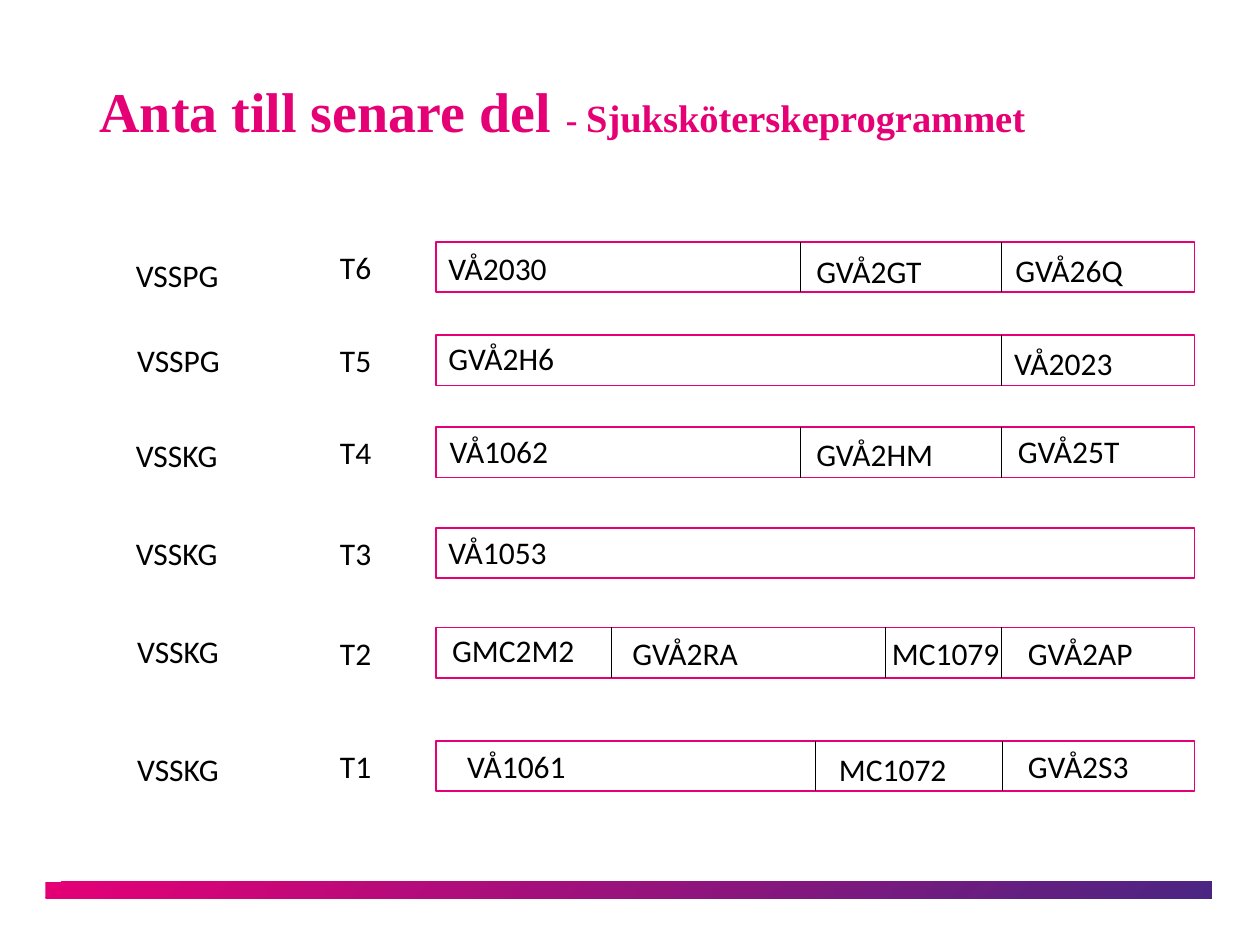
from lxml import etree
from pptx import Presentation
from pptx.dml.color import RGBColor
from pptx.enum.shapes import MSO_CONNECTOR, MSO_SHAPE
from pptx.enum.text import MSO_ANCHOR, MSO_AUTO_SIZE, PP_ALIGN
from pptx.oxml.ns import qn
from pptx.util import Inches, Pt

RECT = MSO_SHAPE.RECTANGLE
STRAIGHT = MSO_CONNECTOR.STRAIGHT
MIDDLE = MSO_ANCHOR.MIDDLE
LEFT = PP_ALIGN.LEFT
NO_FIT = MSO_AUTO_SIZE.NONE
TITLE_ONLY = 5

COLORS = {"pink": "E50076", "purple": "4B2582", "black": "000000", "white": "FFFFFF"}
ROW_H = 0.4
BAR_X, BAR_W = 3.46, 6.02
TERM_X = 2.6

# Term, top, (programme, x, y), dividers, courses as (code, x, y, width)
TERMS = [
    ("T6", 1.92, ("VSSPG", 0.98, 1.98), [6.35, 7.95],
     [("VÅ2030", 3.46, 1.93, 1.08), ("GVÅ2GT", 6.38, 1.95, 1.08),
      ("GVÅ26Q", 7.96, 1.94, 1.08)]),
    ("T5", 2.66, ("VSSPG", 0.99, 2.66), [7.95],
     [("GVÅ2H6", 3.46, 2.64, 1.15), ("VÅ2023", 7.95, 2.68, 1.08)]),
    ("T4", 3.39, ("VSSKG", 0.98, 3.41), [6.35, 7.95],
     [("VÅ1062", 3.47, 3.38, 1.08), ("GVÅ2HM", 6.38, 3.4, 1.15),
      ("GVÅ25T", 7.98, 3.38, 1.15)]),
    ("T3", 4.19, ("VSSKG", 0.98, 4.19), [],
     [("VÅ1053", 3.46, 4.18, 1.08)]),
    ("T2", 4.98, ("VSSKG", 0.99, 4.97), [4.85, 7.03, 7.95],
     [("GMC2M2", 3.49, 4.96, 1.2), ("GVÅ2RA", 4.92, 4.98, 1.08),
      ("MC1079", 6.98, 4.98, 1.08), ("GVÅ2AP", 8.06, 4.98, 1.08)]),
    ("T1", 5.88, ("VSSKG", 0.99, 5.9), [6.47, 7.96],
     [("VÅ1061", 3.61, 5.88, 1.08), ("MC1072", 6.56, 5.9, 1.08),
      ("GVÅ2S3", 8.06, 5.88, 1.08)]),
]


def rgb(name):
    return RGBColor.from_string(COLORS[name])


def add_rect(slide, x, y, w, h):
    sp = slide.shapes.add_shape(RECT, Inches(x), Inches(y), Inches(w), Inches(h))
    sp.shadow.inherit = False
    return sp


def add_label(slide, text, x, y, w):
    sp = slide.shapes.add_textbox(Inches(x), Inches(y), Inches(w), Inches(ROW_H))
    tf = sp.text_frame
    tf.word_wrap = True
    p = tf.paragraphs[0]
    p.text = text
    p.font.name = "Calibri"
    p.font.size = Pt(18)
    p.font.color.rgb = rgb("black")


def add_divider(slide, x, y, h):
    line = slide.shapes.add_connector(
        STRAIGHT, Inches(x), Inches(y), Inches(x), Inches(y + h))
    line.line.color.rgb = rgb("black")
    line.line.width = Pt(0.5)
    etree.SubElement(line._element.spPr, qn("a:effectLst"))


def add_footer_band(slide, x, y, w, h):
    sp = add_rect(slide, x, y, w, h)
    sp.line.fill.background()
    sp.fill.gradient()
    sp.fill.gradient_angle = 315
    for stop, name, position in zip(sp.fill.gradient_stops, ("pink", "purple"), (0, 1)):
        stop.color.rgb = rgb(name)
        stop.position = position


def add_title(slide, x, y, w, h):
    sp = slide.shapes.title
    sp.left, sp.top, sp.width, sp.height = Inches(x), Inches(y), Inches(w), Inches(h)
    tf = sp.text_frame
    tf.auto_size = NO_FIT
    tf.vertical_anchor = MIDDLE
    p = tf.paragraphs[0]
    p.alignment = LEFT
    p.line_spacing = 0.9
    p.font.name = "Times New Roman"
    p.font.bold = True
    p.font.color.rgb = rgb("pink")
    for text, size in (("Anta till senare del ", 32), ("- ", 20),
                       ("Sjuksköterskeprogrammet", 22)):
        r = p.add_run()
        r.text = text
        r.font.size = Pt(size)


def add_term(slide, term, top, programme, dividers, courses):
    bar = add_rect(slide, BAR_X, top, BAR_W, ROW_H)
    bar.fill.solid()
    bar.fill.fore_color.rgb = rgb("white")
    bar.line.color.rgb = rgb("pink")
    bar.line.width = Pt(1)
    add_label(slide, *programme, 0.93)
    add_label(slide, term, TERM_X, top, 0.6)
    for x in dividers:
        add_divider(slide, x, top, ROW_H)
    for course in courses:
        add_label(slide, *course)


def main():
    prs = Presentation()
    prs.slide_width, prs.slide_height = Inches(10), Inches(7.5)
    slide = prs.slides.add_slide(prs.slide_layouts[TITLE_ONLY])

    # Title and footer band
    add_footer_band(slide, 0.36, 7, 9.26, 0.13)
    add_title(slide, 0.69, 0.4, 8.62, 1.02)

    # Terms, latest first
    for term in TERMS:
        add_term(slide, *term)

    prs.save("out.pptx")


if __name__ == "__main__":
    main()
